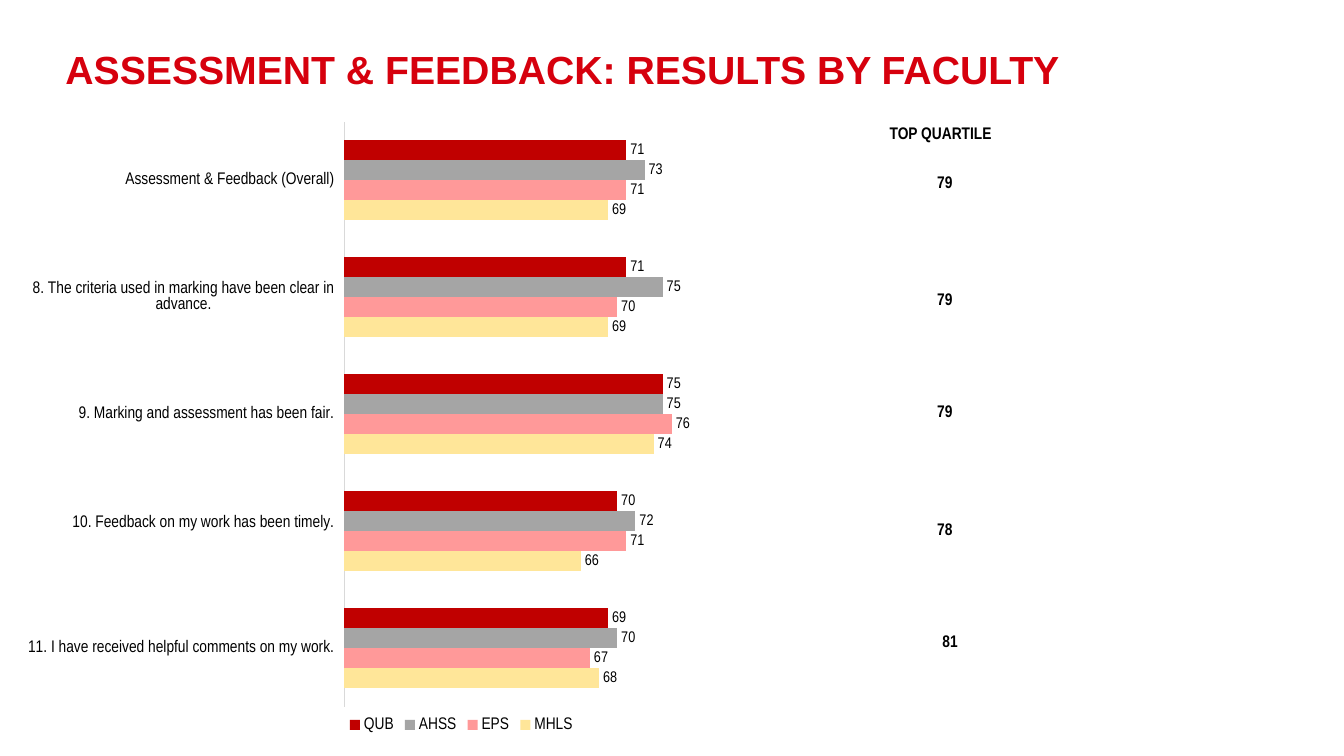
from dataclasses import dataclass

from lxml.etree import SubElement
from pptx import Presentation
from pptx.chart.data import CategoryChartData
from pptx.dml.color import RGBColor
from pptx.enum.chart import XL_CHART_TYPE, XL_LABEL_POSITION, XL_LEGEND_POSITION, XL_TICK_LABEL_POSITION, XL_TICK_MARK
from pptx.enum.text import MSO_ANCHOR, MSO_AUTO_SIZE
from pptx.oxml.ns import qn
from pptx.util import Cm, Pt

COLORS = {
    "title": "D6000D", "text": "000000", "axis": "D9D9D9",
    "MHLS": "FFE699", "EPS": "FF9999", "AHSS": "A5A5A5", "QUB": "C00000",
}
NARROW = "Arial Narrow"


@dataclass(frozen=True)
class Faculty:
    name: str
    scores: tuple[int, ...]


@dataclass(frozen=True)
class Caption:
    text: str
    left: float
    top: float
    width: float = 0.91


QUESTIONS = (
    "11. I have received helpful comments on my work.",
    "10. Feedback on my work has been timely.\n",
    "9. Marking and assessment has been fair.",
    "8. The criteria used in marking have been clear in advance.",
    "Assessment & Feedback (Overall)",
)
FACULTIES = (
    Faculty("MHLS", (68, 66, 74, 69, 69)),
    Faculty("EPS", (67, 71, 76, 70, 71)),
    Faculty("AHSS", (70, 72, 75, 75, 73)),
    Faculty("QUB", (69, 70, 75, 71, 71)),
)
QUARTILES = (
    Caption("TOP QUARTILE", 22.17, 2.97, 3.12),
    Caption("79", 23.37, 4.19),
    Caption("79", 23.37, 7.14),
    Caption("79", 23.37, 9.98),
    Caption("78", 23.37, 12.95),
    Caption("81", 23.5, 15.77),
)


def color(key: str) -> RGBColor:
    return RGBColor.from_string(COLORS[key])


def set_font(font, size: float, name: str = NARROW, key: str = "text", bold: bool = False) -> None:
    for attribute, value in {"size": Pt(size), "name": name, "bold": bold}.items():
        setattr(font, attribute, value)
    font.color.rgb = color(key)


def add_title(slide, text: str) -> None:
    frame = slide.shapes.add_textbox(Cm(1.4), Cm(1.14), Cm(29), Cm(2.77)).text_frame
    frame.word_wrap = True
    heading = frame.paragraphs[0]
    heading.text = text
    heading.line_spacing = 0.9
    set_font(heading.runs[0].font, 28, "Arial", "title", True)


def add_caption(slide, caption: Caption) -> None:
    frame = slide.shapes.add_textbox(
        Cm(caption.left), Cm(caption.top), Cm(caption.width), Cm(0.76)
    ).text_frame
    settings = {
        "word_wrap": False,
        "auto_size": MSO_AUTO_SIZE.SHAPE_TO_FIT_TEXT,
        "vertical_anchor": MSO_ANCHOR.MIDDLE,
        "text": caption.text,
    }
    for attribute, value in settings.items():
        setattr(frame, attribute, value)
    set_font(frame.paragraphs[0].runs[0].font, 12, bold=True)


def place_plot(chart, x: float, y: float, width: float, height: float) -> None:
    plot_area = chart._chartSpace.chart.plotArea
    layout = plot_area.find(qn("c:layout"))
    if layout is None:
        layout = SubElement(plot_area, qn("c:layout"))
        plot_area.insert(0, layout)
    manual = SubElement(layout, qn("c:manualLayout"))
    parts = {"layoutTarget": "inner", "xMode": "edge", "yMode": "edge",
             "x": x, "y": y, "w": width, "h": height}
    for tag, value in parts.items():
        SubElement(manual, qn(f"c:{tag}")).set("val", str(value))


def place_legend(legend, x: float, y: float) -> None:
    layout = legend._element.get_or_add_layout()
    for old in list(layout):
        layout.remove(old)
    manual = SubElement(layout, qn("c:manualLayout"))
    for tag, value in {"xMode": "edge", "yMode": "edge", "x": x, "y": y}.items():
        SubElement(manual, qn(f"c:{tag}")).set("val", str(value))


def add_results(slide) -> None:
    data = CategoryChartData(number_format="0")
    data.categories = QUESTIONS
    for faculty in FACULTIES:
        data.add_series(faculty.name, faculty.scores)
    chart = slide.shapes.add_chart(
        XL_CHART_TYPE.BAR_CLUSTERED, Cm(0.33), Cm(2.74), Cm(22.56), Cm(16.2), data
    ).chart
    chart.has_title = False
    set_font(chart.font, 10, "Arial")

    questions = chart.category_axis
    questions.major_tick_mark = XL_TICK_MARK.NONE
    questions.tick_label_position = XL_TICK_LABEL_POSITION.LOW
    set_font(questions.tick_labels.font, 12)
    questions.format.line.color.rgb = color("axis")
    questions.format.line.width = Pt(0.75)

    scale = {"minimum_scale": 40, "maximum_scale": 100,
             "has_major_gridlines": False, "visible": False}
    for attribute, value in scale.items():
        setattr(chart.value_axis, attribute, value)

    plot = chart.plots[0]
    for attribute, value in {"gap_width": 182, "overlap": 0, "vary_by_categories": False}.items():
        setattr(plot, attribute, value)
    for bars in plot.series:
        bars.format.fill.solid()
        bars.format.fill.fore_color.rgb = color(bars.name)
        scores = bars.data_labels
        scores.show_value = True
        scores.position = XL_LABEL_POSITION.OUTSIDE_END
        set_font(scores.font, 11)

    chart.has_legend = True
    chart.legend.position = XL_LEGEND_POSITION.BOTTOM
    chart.legend.include_in_layout = False
    set_font(chart.legend.font, 12)
    place_plot(chart, 0.37, 0.02, 0.61, 0.91)
    place_legend(chart.legend, 0.37, 0.94)


def main() -> None:
    presentation = Presentation()
    presentation.slide_width = Cm(33.87)
    presentation.slide_height = Cm(19.05)
    slide = presentation.slides.add_slide(presentation.slide_layouts[6])
    add_title(slide, "ASSESSMENT & FEEDBACK: RESULTS BY FACULTY")
    add_results(slide)
    for caption in QUARTILES:
        add_caption(slide, caption)
    presentation.save("out.pptx")


if __name__ == "__main__":
    main()
